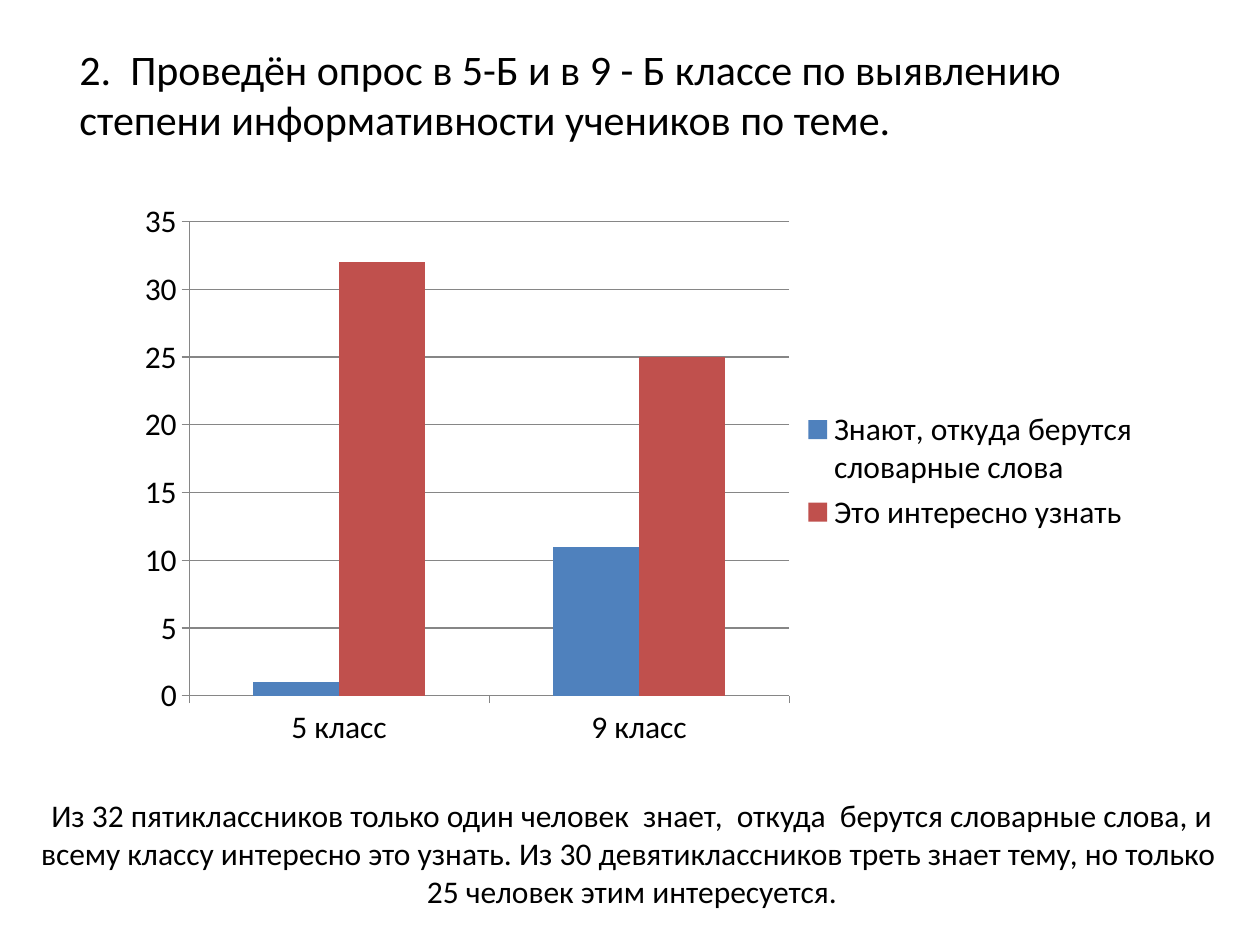
import lxml.etree
import pptx
import pptx.chart.data
import pptx.dml.color
import pptx.enum.chart
import pptx.enum.text
import pptx.oxml
import pptx.oxml.ns
import pptx.util

EMU_PER_PX = 914400 / 126
FONT = "Calibri"
COLORS = {
    "background": "FFFFFF",
    "text": "000000",
    "axis": "868686",
    "know": "4F81BD",
    "interested": "C0504D",
}


def px(length):
    return pptx.util.Emu(round(length * EMU_PER_PX))


def rgb(name):
    return pptx.dml.color.RGBColor.from_string(COLORS[name])


def style_font(font, size, color="text"):
    font.name = FONT
    font.size = pptx.util.Pt(size)
    font.color.rgb = rgb(color)


def write_text(frame, text, size=18, color="text", align="LEFT"):
    paragraph = frame.paragraphs[0]
    paragraph.alignment = getattr(pptx.enum.text.PP_ALIGN, align)
    run = paragraph.add_run()
    run.text = text
    style_font(run.font, size, color)


class SurveySlide:
    def __init__(self, presentation):
        self.slide = presentation.slides.add_slide(presentation.slide_layouts[6])
        fill = self.slide.background.fill
        fill.solid()
        fill.fore_color.rgb = rgb("background")

    def text(self, box, text, **style):
        frame = self.slide.shapes.add_textbox(*map(px, box)).text_frame
        frame.word_wrap = True
        frame.auto_size = pptx.enum.text.MSO_AUTO_SIZE.SHAPE_TO_FIT_TEXT
        write_text(frame, text, **style)

    def columns(self, box, classes, answers, plot, size=18):
        survey = pptx.chart.data.CategoryChartData()
        survey.categories = classes
        for answer, counts, _ in answers:
            survey.add_series(answer, counts)
        chart = self.slide.shapes.add_chart(
            pptx.enum.chart.XL_CHART_TYPE.COLUMN_CLUSTERED, *map(px, box), survey
        ).chart
        style_font(chart.font, size)
        chart.has_title = False
        chart.has_legend = True
        chart.legend.position = pptx.enum.chart.XL_LEGEND_POSITION.RIGHT
        chart.legend.include_in_layout = False

        bars = chart.plots[0]
        bars.gap_width = 150
        bars.overlap = 0
        bars.vary_by_categories = False
        for series, (_, _, color) in zip(bars.series, answers):
            series.format.fill.solid()
            series.format.fill.fore_color.rgb = rgb(color)

        counts_axis = chart.value_axis
        counts_axis.minimum_scale = 0
        counts_axis.maximum_scale = 35
        counts_axis.major_unit = 5
        counts_axis.has_major_gridlines = True
        for axis in (chart.category_axis, counts_axis):
            axis.major_tick_mark = pptx.enum.chart.XL_TICK_MARK.OUTSIDE
        for ruled in (chart.category_axis, counts_axis, counts_axis.major_gridlines):
            ruled.format.line.color.rgb = rgb("axis")
            ruled.format.line.width = pptx.util.Pt(0.75)
        self.place_plot(chart, plot)

    def place_plot(self, chart, plot):
        qn = pptx.oxml.ns.qn
        area = chart.plots[0]._element.getparent()
        for automatic in area.findall(qn("c:layout")):
            area.remove(automatic)
        layout = lxml.etree.Element(qn("c:layout"))
        manual = lxml.etree.SubElement(layout, qn("c:manualLayout"))
        settings = [("layoutTarget", "inner"), ("xMode", "edge"), ("yMode", "edge")]
        settings += zip("xywh", plot)
        for tag, value in settings:
            lxml.etree.SubElement(manual, qn(f"c:{tag}")).set("val", str(value))
        area.insert(0, layout)


def main():
    presentation = pptx.Presentation()
    presentation.slide_width = px(1260)
    presentation.slide_height = px(945)

    survey = SurveySlide(presentation)
    survey.columns(
        (111, 185, 1042, 572),
        ["5 класс", "9 класс"],
        [
            ("Знают, откуда берутся словарные слова", (1, 11), "know"),
            ("Это интересно узнать", (32, 25), "interested"),
        ],
        plot=(0.075, 0.064, 0.576, 0.829),
    )
    survey.text(
        (28, 790, 1208, 127),
        "Из 32 пятиклассников только один человек  знает,  откуда  берутся "
        "словарные слова, и всему классу интересно это узнать. Из 30 "
        "девятиклассников треть знает тему, но только  25 человек этим интересуется.",
        align="CENTER",
    )
    survey.text(
        (67, 37, 1129, 115),
        "2.  Проведён опрос в 5-Б и в 9 - Б классе по выявлению степени "
        "информативности учеников по теме.",
        size=24,
    )
    presentation.save("out.pptx")


if __name__ == "__main__":
    main()
